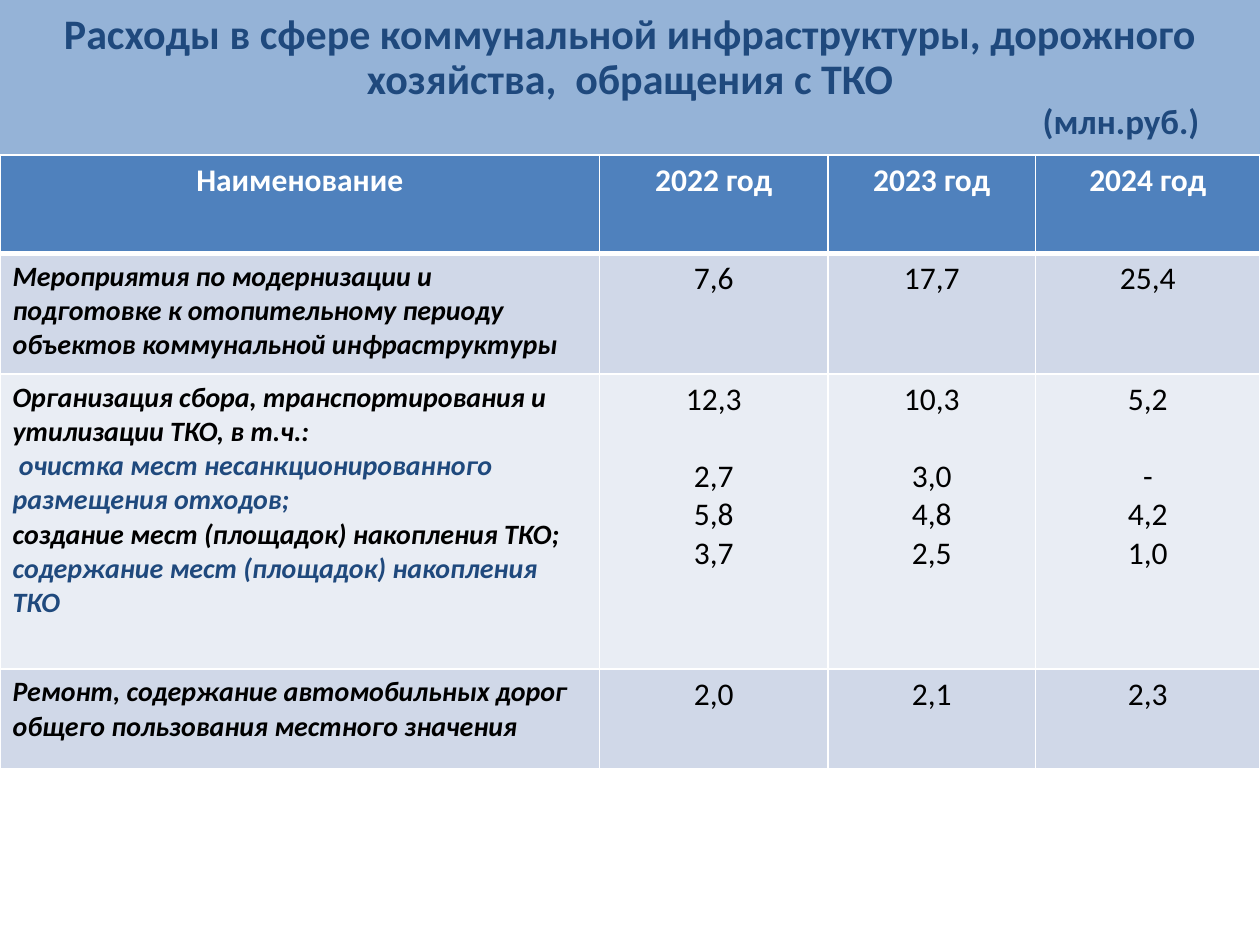
"""Build the slide on spending on utilities, roads and municipal waste."""
import dataclasses
import typing

import lxml.etree
import pptx
import pptx.dml.color
import pptx.enum.text
import pptx.oxml.ns
import pptx.util

Inches = pptx.util.Inches
Pt = pptx.util.Pt
ALIGN = pptx.enum.text.PP_ALIGN

COLOURS = {
    "banner": "95B3D7",
    "navy": "1F497D",
    "header": "4F81BD",
    "band_dark": "D0D8E8",
    "band_light": "E9EDF4",
    "white": "FFFFFF",
    "black": "000000",
}
FONT = "Calibri"
BANNER_HEIGHT = 1.23
COLUMN_WIDTHS = (4.76, 1.81, 1.65, 1.78)
HEADER_HEIGHT = 0.78
HEADINGS = ("Наименование", "2022 год", "2023 год", "2024 год")


@dataclasses.dataclass(frozen=True)
class Line:
    """One paragraph of an expense name."""
    text: str
    colour: str = "black"


@dataclasses.dataclass(frozen=True)
class Expense:
    """One table row: its name lines and the yearly amounts."""
    height: float
    fill: str
    names: tuple[Line, ...]
    years: tuple[tuple[str, ...], ...]


EXPENSES = (
    Expense(0.96, "band_dark", (
        Line("Мероприятия по модернизации и подготовке к отопительному периоду "
             "объектов коммунальной инфраструктуры"),
    ), (("7,6",), ("17,7",), ("25,4",))),
    Expense(2.34, "band_light", (
        Line("Организация сбора, транспортирования и утилизации ТКО, в т.ч.:"),
        Line(" очистка мест несанкционированного размещения отходов;", "navy"),
        Line("создание мест (площадок) накопления ТКО;"),
        Line("содержание мест (площадок) накопления ТКО", "navy"),
    ), (("12,3", "2,7", "5,8", "3,7"),
        ("10,3", "3,0", "4,8", "2,5"),
        ("5,2", "-", "4,2", "1,0"))),
    Expense(0.79, "band_dark", (
        Line("Ремонт, содержание автомобильных дорог общего пользования "
             "местного значения"),
    ), (("2,0",), ("2,1",), ("2,3",))),
)


def rgb(name: str) -> pptx.dml.color.RGBColor:
    """Return the named colour."""
    return pptx.dml.color.RGBColor.from_string(COLOURS[name])


def write(frame: typing.Any, text: str, *, first: bool = True, size: float = 18,
          colour: str = "black", bold: bool = False, italic: bool = False,
          align: typing.Any = ALIGN.CENTER, before: float = 0,
          spacing: float = 1.0) -> None:
    """Write one formatted paragraph into a text frame."""
    paragraph = frame.paragraphs[0] if first else frame.add_paragraph()
    paragraph.alignment = align
    paragraph.space_before = Pt(before)
    paragraph.line_spacing = spacing
    run = paragraph.add_run()
    run.text = text
    run.font.name = FONT
    run.font.size = Pt(size)
    run.font.bold = bold
    run.font.italic = italic
    run.font.color.rgb = rgb(colour)


def style_cell(cell: typing.Any, fill: str, top: float = 1, bottom: float = 1) -> None:
    """Fill a cell and give it white borders."""
    cell.fill.solid()
    cell.fill.fore_color.rgb = rgb(fill)
    properties = cell._tc.get_or_add_tcPr()
    qn = pptx.oxml.ns.qn
    sides = {"a:lnL": 1, "a:lnR": 1, "a:lnT": top, "a:lnB": bottom}
    for index, (side, width) in enumerate(sides.items()):
        border = lxml.etree.Element(qn(side), w=str(Pt(width)))
        solid = lxml.etree.SubElement(border, qn("a:solidFill"))
        lxml.etree.SubElement(solid, qn("a:srgbClr"), val=COLOURS["white"])
        properties.insert(index, border)


def draw_title(slide: typing.Any) -> None:
    """Turn the title placeholder into the banner."""
    title = slide.shapes.title
    title.left, title.top = Inches(0), Inches(0)
    title.width, title.height = Inches(10), Inches(BANNER_HEIGHT)
    title.fill.solid()
    title.fill.fore_color.rgb = rgb("banner")
    frame = title.text_frame
    frame.word_wrap = True
    frame.auto_size = pptx.enum.text.MSO_AUTO_SIZE.NONE
    frame.vertical_anchor = pptx.enum.text.MSO_ANCHOR.MIDDLE
    frame.margin_left = frame.margin_right = Inches(0.48)
    write(frame, "Расходы в сфере коммунальной инфраструктуры, дорожного "
          "хозяйства,  обращения с ТКО",
          size=24, colour="navy", bold=True, spacing=0.9)
    write(frame, "(млн.руб.)", first=False, size=20, colour="navy", bold=True,
          align=ALIGN.RIGHT, spacing=0.9)


def draw_expense(table: typing.Any, row: int, expense: Expense) -> None:
    """Fill one body row of the table."""
    top = 3 if row == 1 else 1
    for cell in table.rows[row].cells:
        style_cell(cell, expense.fill, top=top)
    for index, line in enumerate(expense.names):
        write(table.cell(row, 0).text_frame, line.text, first=index == 0, size=16,
              colour=line.colour, bold=True, italic=True, align=ALIGN.LEFT)
    for column, amounts in enumerate(expense.years, start=1):
        for index, amount in enumerate(amounts):
            write(table.cell(row, column).text_frame, amount, first=index == 0,
                  before=22 if index == 1 else 0)


def draw_table(slide: typing.Any) -> None:
    """Draw the table of expenses by year."""
    heights = (HEADER_HEIGHT, *(expense.height for expense in EXPENSES))
    table = slide.shapes.add_table(
        len(heights), len(COLUMN_WIDTHS), Inches(0), Inches(BANNER_HEIGHT),
        Inches(sum(COLUMN_WIDTHS)), Inches(sum(heights))).table
    for column, width in zip(table.columns, COLUMN_WIDTHS):
        column.width = Inches(width)
    for row, height in zip(table.rows, heights):
        row.height = Inches(height)
    for cell, heading in zip(table.rows[0].cells, HEADINGS):
        style_cell(cell, "header", bottom=3)
        write(cell.text_frame, heading, colour="white", bold=True)
    for row, expense in enumerate(EXPENSES, start=1):
        draw_expense(table, row, expense)


def main() -> None:
    """Build and save the presentation."""
    presentation = pptx.Presentation()
    presentation.slide_width, presentation.slide_height = Inches(10), Inches(7.5)
    slide = presentation.slides.add_slide(presentation.slide_layouts[5])
    draw_title(slide)
    draw_table(slide)
    presentation.save("out.pptx")


if __name__ == "__main__":
    main()
